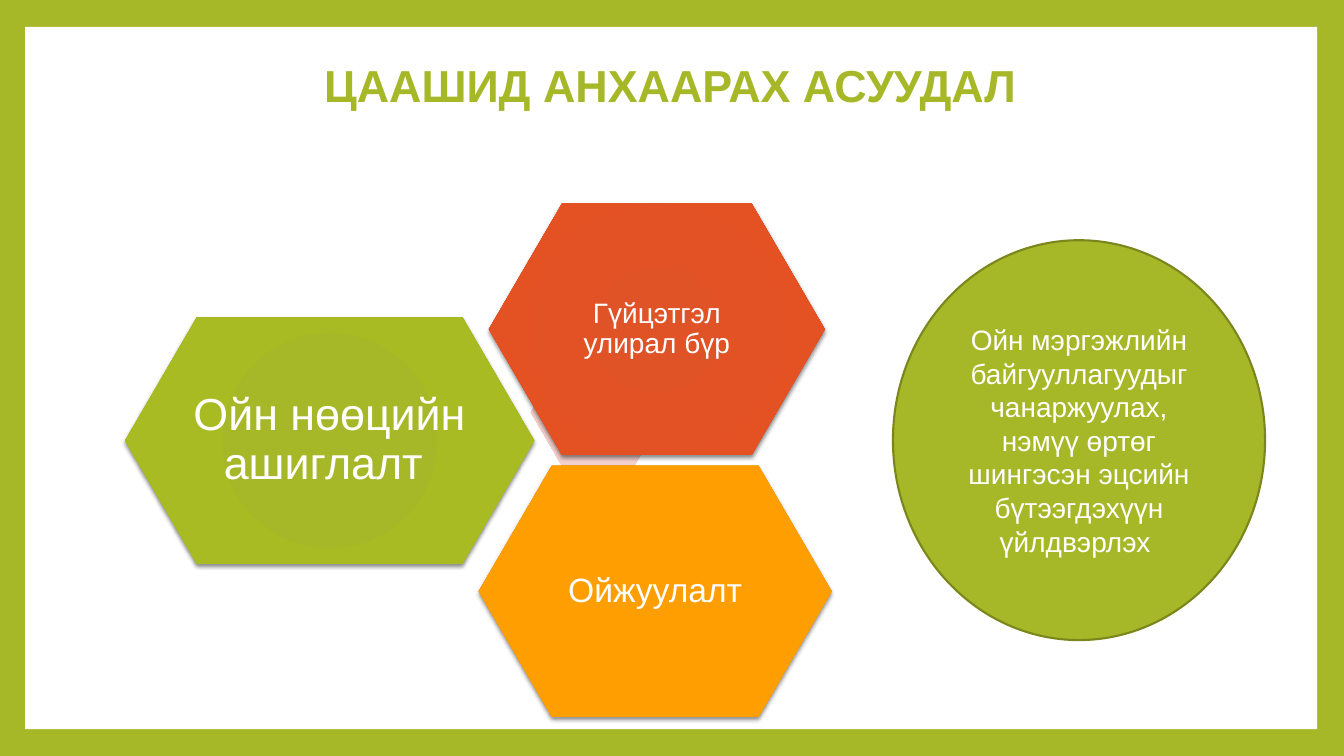
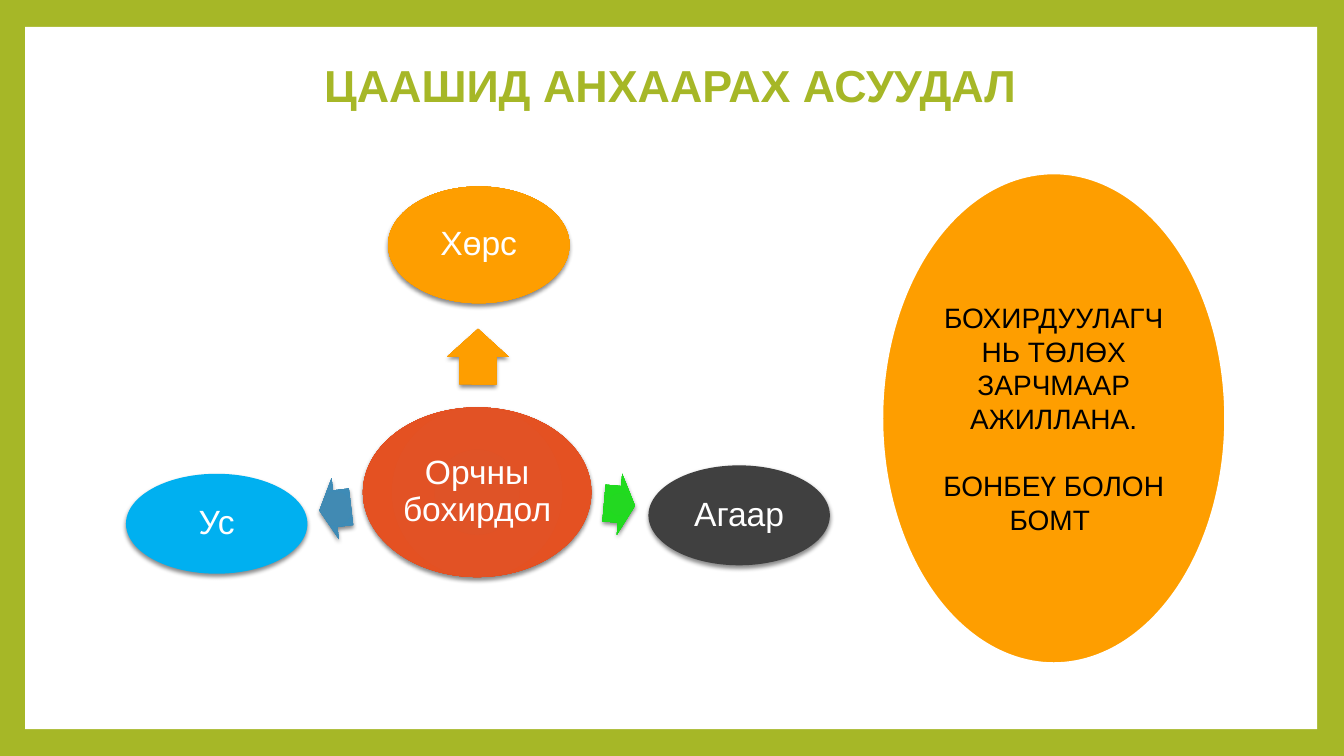
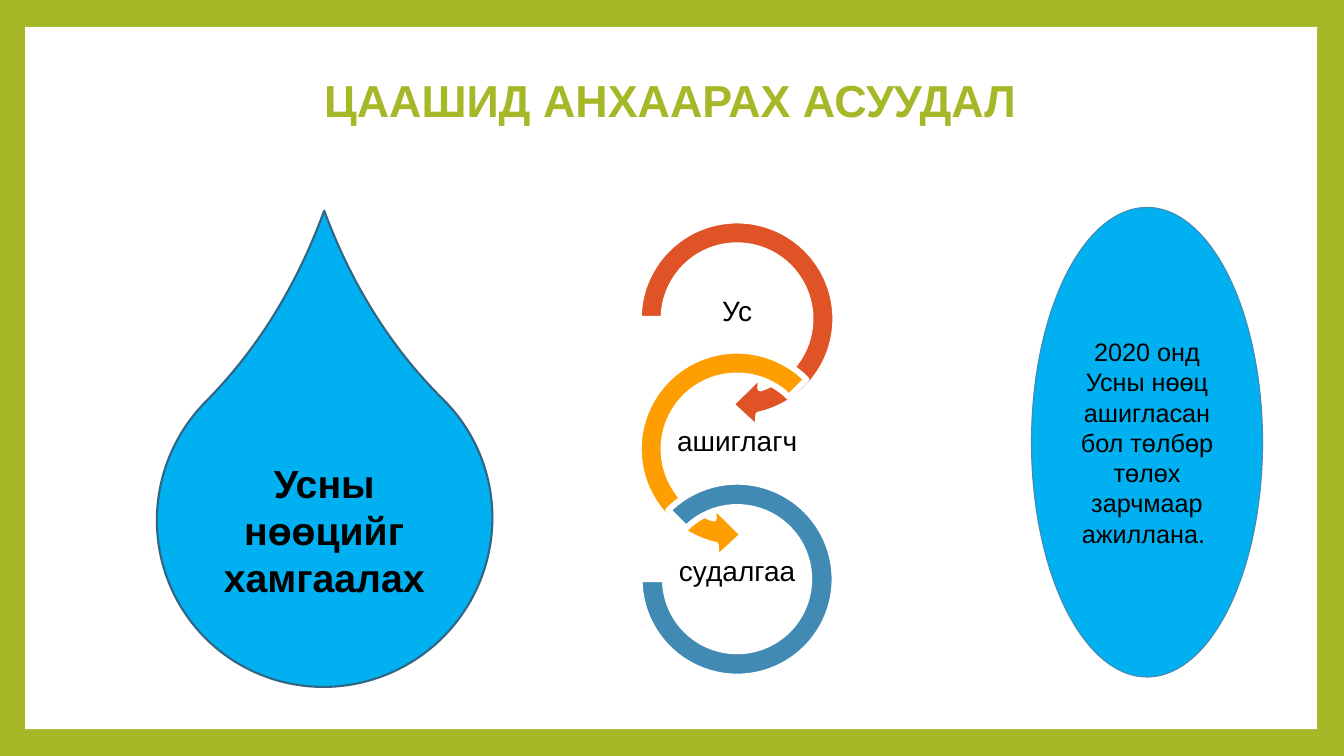
import pptx
import pptx.dml.color
import pptx.enum.shapes
import pptx.enum.text
import pptx.oxml
import pptx.oxml.ns
import pptx.util

SHAPES = pptx.enum.shapes.MSO_SHAPE
WIDTH, HEIGHT = pptx.util.Inches(13.333), pptx.util.Inches(7.5)
COLUMNS, ROWS = 160, 90
FONT = "Arial"
GREEN, WHITE, BLACK, SKY = "A6B727", "FFFFFF", "000000", "00B0F0"
ORANGE, RED, BLUE, GRAY = "FE9E00", "DF5327", "418AB3", "404040"
GREEN_GLOW = ("A6B727", "A9BB23", "A1B316")
RED_GLOW = ("DF5327", "E45122", "DB4313")
ORANGE_GLOW = ("FE9E00", "FE9E00", "E78F00")
PINK_GLOW = ("F3D1CD", "F4D0CC", "E0BBB7")
LIME_GLOW = ("23D821", "1EDC1D", "0FD40E")
BLUE_GLOW = ("418AB3", "3E8BB6", "3180AD")
HEXAGON = (0.29, 1.15)
ARROW = (0.6, 0.5)
TITLE = "ЦААШИД АНХААРАХ АСУУДАЛ"


def color(value):
    return pptx.dml.color.RGBColor.from_string(value)


def grid(left, top, width, height):
    return (round(left * WIDTH / COLUMNS), round(top * HEIGHT / ROWS),
            round(width * WIDTH / COLUMNS), round(height * HEIGHT / ROWS))


def drawing(tag, content):
    return pptx.oxml.parse_xml(
        f"<a:{tag} {pptx.oxml.ns.nsdecls('a')}>{content}</a:{tag}>")


def set_glow(shape, colors):
    stops = "".join(
        f'<a:gs pos="{position}"><a:srgbClr val="{value}"/></a:gs>'
        for position, value in zip((0, 90000, 100000), colors))
    circle = ('<a:path path="circle"><a:fillToRect l="100000" t="100000" '
              'r="100000" b="100000"/></a:path>')
    geometry = shape.element.spPr.find(pptx.oxml.ns.qn("a:prstGeom"))
    geometry.addnext(drawing("gradFill", f"<a:gsLst>{stops}</a:gsLst>{circle}"))


def set_shadow(shape):
    properties = shape.element.spPr
    properties.remove(properties.find(pptx.oxml.ns.qn("a:effectLst")))
    properties.append(drawing(
        "effectLst",
        '<a:outerShdw blurRad="38100" dist="25400" dir="5400000" rotWithShape="0">'
        f'<a:srgbClr val="{BLACK}"><a:alpha val="45000"/></a:srgbClr></a:outerShdw>'))


def write(shape, text, size=24, ink=WHITE, bold=False, spacing=1.0,
          inset=0.03, anchor="MIDDLE", gap=0):
    frame = shape.text_frame
    frame.word_wrap = True
    frame.vertical_anchor = getattr(pptx.enum.text.MSO_ANCHOR, anchor)
    frame.margin_left = frame.margin_right = pptx.util.Inches(inset)
    frame.margin_top = frame.margin_bottom = pptx.util.Inches(min(inset, 0.05))
    frame.text = text
    for index, paragraph in enumerate(frame.paragraphs):
        paragraph.alignment = pptx.enum.text.PP_ALIGN.CENTER
        paragraph.line_spacing = spacing
        paragraph.space_before = pptx.util.Pt(gap if index else 0)
        font = paragraph.font
        font.name, font.size, font.bold = FONT, pptx.util.Pt(size), bold
        font.color.rgb = color(ink)


def add_label(slide, place, text, **form):
    write(slide.shapes.add_textbox(*grid(*place)), text, **form)


def add_figure(slide, kind, place, fill, line=None, line_width=1.5,
               adjustments=(), rotation=0, shadow=False):
    shape = slide.shapes.add_shape(kind, *grid(*place))
    shape.shadow.inherit = False
    shape.rotation = rotation
    for index, value in enumerate(adjustments):
        shape.adjustments[index] = value
    if isinstance(fill, tuple):
        set_glow(shape, fill)
    else:
        shape.fill.solid()
        shape.fill.fore_color.rgb = color(fill)
    if line:
        shape.line.color.rgb = color(line)
        shape.line.width = pptx.util.Pt(line_width)
    else:
        shape.line.fill.background()
    if shadow:
        set_shadow(shape)
    return shape


def add_slide(presentation, title_top=6.2):
    slide = presentation.slides.add_slide(presentation.slide_layouts[6])
    slide.background.fill.solid()
    slide.background.fill.fore_color.rgb = color(GREEN)
    add_figure(slide, SHAPES.RECTANGLE, (3, 3.2, 153.8, 83.6), WHITE)
    add_label(slide, (15, title_top, 129.6, 8.5), TITLE, size=32, ink=GREEN,
              bold=True, spacing=0.9, inset=0.1)
    return slide


def build_forest(presentation):
    slide = add_slide(presentation)
    for place, glow, text, size in (
            ((14.9, 37.7, 48.7, 29.5), GREEN_GLOW, "Ойн нөөцийн ашиглалт ", 32),
            ((63.2, 42.2, 16, 13.8), PINK_GLOW, None, None),
            ((58.2, 24.2, 40, 30), RED_GLOW, "Гүйцэтгэл улирал бүр", 20),
            ((57, 55.4, 42, 30), ORANGE_GLOW, "Ойжуулалт", 24)):
        hexagon = add_figure(slide, SHAPES.HEXAGON, place, glow,
                             adjustments=HEXAGON, shadow=bool(text))
        if text:
            write(hexagon, text, size=size, spacing=0.9)
    goal = add_figure(slide, SHAPES.OVAL, (106.3, 28.6, 44.3, 47.6), GREEN, "7B871D")
    write(goal, "Ойн мэргэжлийн байгууллагуудыг\nчанаржуулах, нэмүү өртөг "
          "шингэсэн эцсийн бүтээгдэхүүн үйлдвэрлэх ", size=20, inset=0.1)


def build_pollution(presentation):
    slide = add_slide(presentation)
    for place, fill, text in (
            ((43.2, 48.5, 27.2, 20.2), RED_GLOW, "Орчны бохирдол"),
            ((46.2, 22.2, 21.6, 13.9), ORANGE_GLOW, "Хөрс"),
            ((77.2, 55.4, 21.6, 11.9), GRAY, "Агаар"),
            ((15, 56.4, 21.6, 11.9), SKY, "Ус")):
        oval = add_figure(slide, SHAPES.OVAL, place, fill, shadow=True)
        write(oval, text, spacing=0.9)
    for place, glow, rotation in (
            ((53.6, 38.8, 6.6, 7.3), ORANGE_GLOW, 270.2),
            ((71.9, 56.4, 3.7, 7.3), LIME_GLOW, 5.1),
            ((38, 56.9, 3.8, 7.3), BLUE_GLOW, 173.2)):
        add_figure(slide, SHAPES.RIGHT_ARROW, place, glow, adjustments=ARROW,
                   rotation=rotation, shadow=True)
    rule = add_figure(slide, SHAPES.OVAL, (104.8, 20.4, 41.3, 58.8), ORANGE, WHITE, 4.25)
    write(rule, "БОХИРДУУЛАГЧ НЬ ТӨЛӨХ ЗАРЧМААР АЖИЛЛАНА.\nБОНБЕҮ БОЛОН БОМТ ",
          size=20, ink=BLACK, inset=0.1, gap=24)


def build_water(presentation):
    slide = add_slide(presentation, title_top=8)
    center, first_row, pitch = 87.75, 37.95, 15.5
    rings = (
        (SHAPES.CIRCULAR_ARROW, 26.9, RED, (0.11, 11.42, 45, 108, 0.12), "Ус"),
        (SHAPES.LEFT_CIRCULAR_ARROW, 26.9, ORANGE, (0.11, 11.42, 63, 189, 0.12), "ашиглагч"),
        (SHAPES.BLOCK_ARC, 23.2, BLUE, (135, 108, 0.13), "судалгаа"))
    for index, (kind, size, fill, adjustments, text) in enumerate(rings):
        middle = first_row + index * pitch
        add_figure(slide, kind, (center - size / 2, middle - size / 2, size, size),
                   fill, WHITE, 4.25, adjustments)
        add_label(slide, (center - 7.5, middle - 4.5, 15, 7.4), text, size=20,
                  ink=BLACK, spacing=0.9, inset=0.01)
    add_figure(slide, SHAPES.TEAR, (18.6, 41.9, 40.1, 39.8), SKY, "306684",
               adjustments=(1.3,), rotation=314.7)
    add_label(slide, (23.5, 54.1, 30.2, 18.1), "Усны нөөцийг хамгаалах", size=28,
              ink=BLACK, bold=True, inset=0.1, anchor="TOP")
    payment = add_figure(slide, SHAPES.OVAL, (122.8, 24.7, 27.5, 55.9), SKY, BLUE, 0.79)
    write(payment, "2020 онд Усны нөөц ашигласан бол төлбөр төлөх зарчмаар ажиллана. ",
          size=18, ink=BLACK, inset=0.1)


def main():
    presentation = pptx.Presentation()
    presentation.slide_width, presentation.slide_height = WIDTH, HEIGHT
    build_forest(presentation)
    build_pollution(presentation)
    build_water(presentation)
    presentation.save("out.pptx")


if __name__ == "__main__":
    main()
